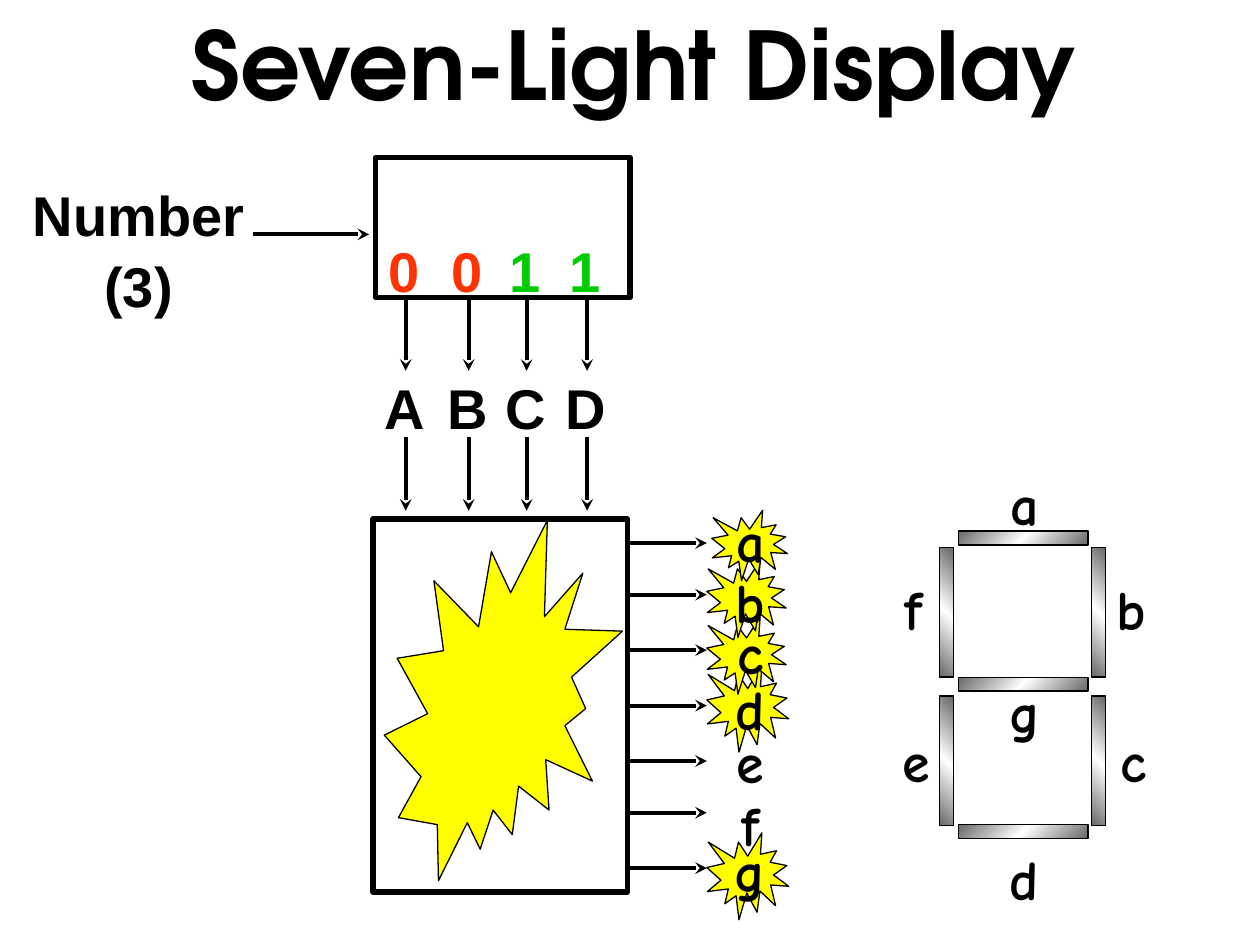
from copy import deepcopy

from lxml import etree
from pptx import Presentation
from pptx.dml.color import RGBColor
from pptx.enum.shapes import MSO_CONNECTOR, MSO_SHAPE
from pptx.enum.text import MSO_ANCHOR, MSO_AUTO_SIZE, PP_ALIGN
from pptx.oxml.ns import qn
from pptx.util import Inches, Pt

RECT = MSO_SHAPE.RECTANGLE
SMALL_BURST, BIG_BURST = MSO_SHAPE.EXPLOSION1, MSO_SHAPE.EXPLOSION2
STRAIGHT = MSO_CONNECTOR.STRAIGHT
CENTER = PP_ALIGN.CENTER
TOP, MIDDLE = MSO_ANCHOR.TOP, MSO_ANCHOR.MIDDLE
NO_FIT, GROW = MSO_AUTO_SIZE.NONE, MSO_AUTO_SIZE.SHAPE_TO_FIT_TEXT

COLORS = {"ink": "000000", "lit": "FFFF00", "zero": "FF3300",
          "one": "00CC00", "steel": "676767", "shine": "FFFFFF"}
SANS, COMIC, HEADING = "Arial", "Comic Neue", "TeX Gyre Adventor"
LETTER_W, LETTER_H = 0.45, 0.63
BIT_COLUMNS = (0.24, 0.74, 1.2, 1.68)


def rgb(name):
    """Return the named colour."""
    return RGBColor.from_string(COLORS[name])


def style(p, font, size, color="ink"):
    """Format a centred bold paragraph."""
    p.alignment = CENTER
    p.font.name, p.font.size, p.font.bold = font, Pt(size), True
    p.font.color.rgb = rgb(color)


def add_label(s, text, x, y, w=LETTER_W, h=LETTER_H, font=SANS, color="ink"):
    """Add an unwrapped label with one paragraph per line."""
    tf = s.shapes.add_textbox(Inches(x), Inches(y), Inches(w), Inches(h)).text_frame
    tf.word_wrap, tf.auto_size, tf.vertical_anchor = False, GROW, TOP
    tf.text = text
    for p in tf.paragraphs:
        style(p, font, 32, color)
        p.line_spacing = 1.06


def add_outline(s, kind, x, y, w, h, weight=0.75, fill=None):
    """Add a black-outlined shape, filled only if a colour is named."""
    sp = s.shapes.add_shape(kind, Inches(x), Inches(y), Inches(w), Inches(h))
    sp.shadow.inherit = False
    sp.line.color.rgb, sp.line.width = rgb("ink"), Pt(weight)
    if fill:
        sp.fill.solid()
        sp.fill.fore_color.rgb = rgb(fill)
    else:
        sp.fill.background()
    return sp


def add_arrow(s, x, y, dx, dy):
    """Add an arrow with a stealth head at its far end."""
    line = s.shapes.add_connector(
        STRAIGHT, Inches(x), Inches(y), Inches(x + dx), Inches(y + dy))
    line.line.color.rgb, line.line.width = rgb("ink"), Pt(2.25)
    etree.SubElement(line.line._get_or_add_ln(), qn("a:tailEnd"), type="stealth")
    etree.SubElement(line._element.spPr, qn("a:effectLst"))


def add_segment(s, cx, cy, upright):
    """Add one metallic bar centred on a point."""
    w, h = 1.03, 0.11
    sp = add_outline(s, RECT, cx - w / 2, cy - h / 2, w, h)
    sp.rotation = 90 if upright else 0
    sp.fill.gradient()
    sp.fill.gradient_angle = 315
    first = sp._element.spPr.find(".//" + qn("a:gs"))
    middle = deepcopy(first)
    middle.set("pos", "50000")
    first.addnext(middle)
    for stop, color in zip(sp.fill.gradient_stops, ("steel", "shine", "steel")):
        stop.color.rgb = rgb(color)


def place_title(s, x, y, w, h):
    """Move and format the slide title."""
    sp = s.shapes.title
    sp.left, sp.top, sp.width, sp.height = map(Inches, (x, y, w, h))
    tf = sp.text_frame
    tf.text = "Seven-Light Display"
    tf.word_wrap, tf.auto_size, tf.vertical_anchor = True, NO_FIT, MIDDLE
    style(tf.paragraphs[0], HEADING, 54)


def place_number(s, x, y, w, h):
    """Draw the number and its four-bit register."""
    add_label(s, "Number\n(3)", x - 2.82, y + 0.1, 1.88, 1.17)
    add_outline(s, RECT, x, y, w, h, 3)
    add_arrow(s, x - 0.97, y + 0.61, 0.92, 0)
    for bit, column in zip("0011", BIT_COLUMNS):
        add_label(s, bit, x + column - 0.24, y + 0.55,
                  color="one" if bit == "1" else "zero")


def place_inputs(s, x, y, h):
    """Draw the lettered wires between the register and the decoder."""
    for name, column in zip("ABCD", BIT_COLUMNS):
        add_arrow(s, x + column, y, 0, h / 3)
        add_label(s, name, x + column - 0.27, y + 0.52, 0.52)
        add_arrow(s, x + column, y + 1.11, 0, h / 3)


def place_decoder(s, x, y, w, h):
    """Draw the decoder box and its burst."""
    add_outline(s, RECT, x, y, w, h, 3)
    add_outline(s, BIG_BURST, x + 0.09, y + 0.01, 1.89, 2.86, fill="lit")


def place_outputs(s, x, y):
    """Draw the seven output wires, lighting the active ones."""
    bursts = {"g": (2.49, 0.65, 0.69), "d": (1.16, 0.65, 0.69),
              "c": (0.78, 0.63, 0.61), "b": (0.33, 0.63, 0.61),
              "a": (-0.07, 0.6, 0.56)}
    for name, (dy, w, h) in bursts.items():
        dx = 0.67 if name == "a" else 0.63
        add_outline(s, SMALL_BURST, x + dx, y + dy, w, h, fill="lit")
    wires = (0.19, 0.6, 1.04, 1.48, 1.92, 2.33, 2.77)
    letters = (-0.18, 0.3, 0.71, 1.15, 1.57, 2.07, 2.44)
    for name, wire, letter in zip("abcdefg", wires, letters):
        add_arrow(s, x, y + wire, 0.63, 0)
        add_label(s, name, x + 0.75, y + letter, font=COMIC)


def place_display(s, cx, cy):
    """Draw the seven segments and their letters around the centre bar."""
    for row in (-1.16, 0, 1.17):
        add_segment(s, cx, cy + row, False)
    for side in (-0.61, 0.6):
        for row in (-0.57, 0.61):
            add_segment(s, cx + side, cy + row, True)
    letters = {"a": (0.01, -1.47), "b": (0.86, -0.64), "c": (0.88, 0.57),
               "d": (0.01, 1.51), "e": (-0.85, 0.57), "f": (-0.87, -0.64),
               "g": (0.01, 0.18)}
    for name, (dx, dy) in letters.items():
        add_label(s, name, cx + dx - LETTER_W / 2, cy + dy - LETTER_H / 2,
                  font=COMIC)


def main():
    """Build and save the slide."""
    prs = Presentation()
    prs.slide_width, prs.slide_height = Inches(10), Inches(7.5)
    s = prs.slides.add_slide(prs.slide_layouts[5])
    place_title(s, 0.25, 0, 9.56, 1)
    place_number(s, 2.98, 1.25, 2.02, 1.11)
    place_inputs(s, 2.98, 2.36, 1.75)
    place_decoder(s, 2.96, 4.12, 2.02, 2.96)
    place_outputs(s, 4.98, 4.12)
    place_display(s, 8.12, 5.43)
    prs.save("out.pptx")


if __name__ == "__main__":
    main()
